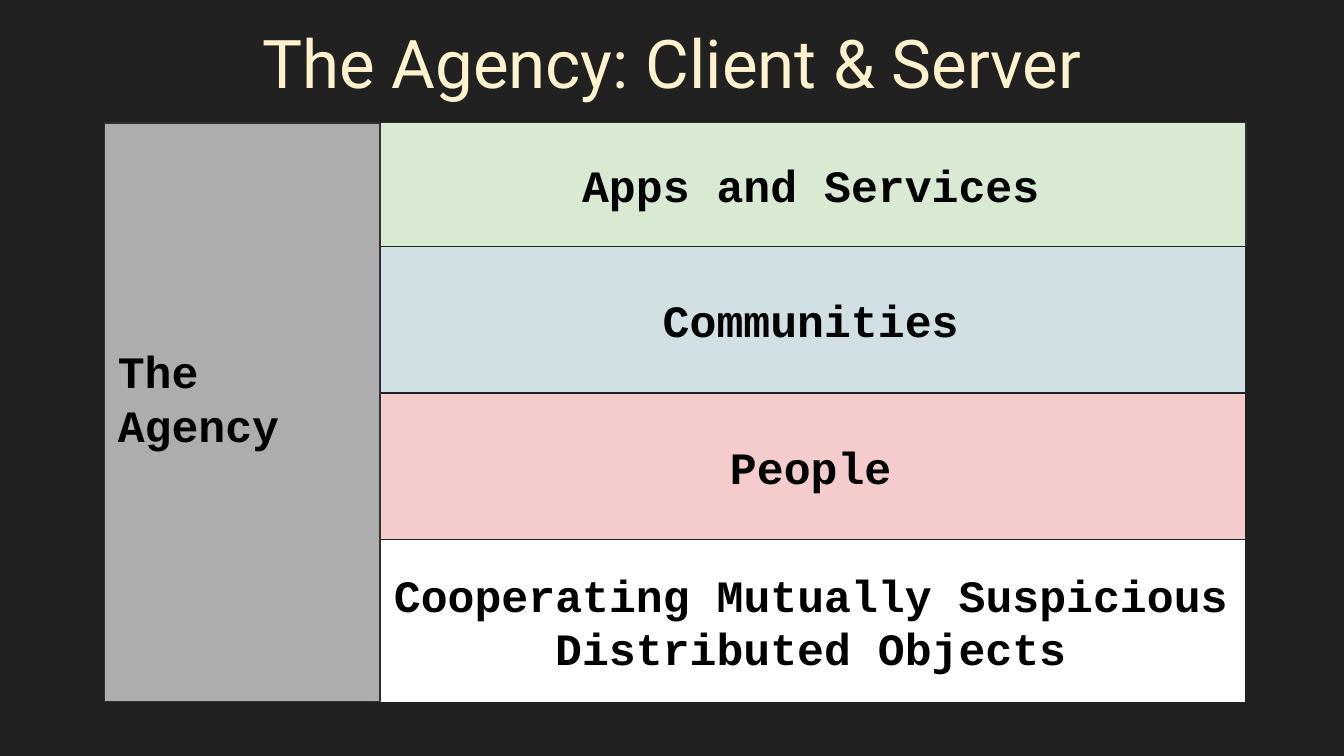
from dataclasses import dataclass

import pptx
import pptx.dml.color
import pptx.enum.shapes
import pptx.enum.text
import pptx.util

Pt = pptx.util.Pt
ALIGN = pptx.enum.text.PP_ALIGN


@dataclass(frozen=True)
class Theme:
    background: str = "212121"
    title: str = "FFF2CC"
    text: str = "000000"
    outline: str = "212121"
    soft_outline: str = "303030"
    agency: str = "ADADAD"
    apps: str = "D9EAD3"
    communities: str = "D0E0E3"
    people: str = "F4CCCC"
    objects: str = "FFFFFF"
    title_font: str = "Roboto"
    label_font: str = "Courier New"
    title_size: float = 36
    label_size: float = 24
    inset: float = 7.2


THEME = Theme()


def rgb(value):
    return pptx.dml.color.RGBColor.from_string(value)


def write_text(shape, text, font=THEME.label_font, size=THEME.label_size,
               color=THEME.text, bold=True, align=ALIGN.CENTER,
               bottom_inset=THEME.inset):
    frame = shape.text_frame
    frame.word_wrap = True
    frame.auto_size = pptx.enum.text.MSO_AUTO_SIZE.NONE
    frame.vertical_anchor = pptx.enum.text.MSO_ANCHOR.MIDDLE
    frame.margin_left = frame.margin_right = frame.margin_top = Pt(THEME.inset)
    frame.margin_bottom = Pt(bottom_inset)
    para = frame.paragraphs[0]
    para.alignment = align
    span = para.add_run()
    span.text = text
    span.font.name = font
    span.font.size = Pt(size)
    span.font.bold = bold
    span.font.color.rgb = rgb(color)


def set_outline(shape, color):
    shape.line.color.rgb = rgb(color)
    shape.line.width = Pt(0.75)


def add_panel(page, box, fill, outline, text, **text_format):
    panel = page.shapes.add_shape(
        pptx.enum.shapes.MSO_SHAPE.RECTANGLE, *(Pt(length) for length in box))
    panel.shadow.inherit = False
    panel.fill.solid()
    panel.fill.fore_color.rgb = rgb(fill)
    set_outline(panel, outline)
    write_text(panel, text, **text_format)


def place_title(page, box, text):
    title = page.shapes.title
    title.left, title.top, title.width, title.height = map(Pt, box)
    set_outline(title, THEME.outline)
    write_text(title, text, font=THEME.title_font, size=THEME.title_size,
               color=THEME.title, bold=False)


def place_layers(page, box):
    """Stack the layers from top to bottom, sharing the height by weight."""
    left, top, width, height = box
    layers = [
        ("Apps and Services", THEME.apps, THEME.soft_outline, 66.5),
        ("Communities", THEME.communities, THEME.outline, 78.5),
        ("People", THEME.people, THEME.outline, 78.5),
        ("Cooperating Mutually Suspicious Distributed Objects",
         THEME.objects, THEME.outline, 87.5),
    ]
    total = sum(weight for *_, weight in layers)
    for text, fill, outline, weight in layers:
        layer_height = height * weight / total
        add_panel(page, (left, top, width, layer_height), fill, outline, text)
        top += layer_height


def place_agency(page, box):
    # The deeper bottom inset lifts the label above the middle
    add_panel(page, box, THEME.agency, THEME.soft_outline, "The Agency",
              align=ALIGN.LEFT, bottom_inset=THEME.inset + 16)


def main():
    deck = pptx.Presentation()
    deck.slide_width, deck.slide_height = Pt(720), Pt(405)
    page = deck.slides.add_slide(deck.slide_layouts.get_by_name("Title Only"))
    page.background.fill.solid()
    page.background.fill.fore_color.rgb = rgb(THEME.background)

    place_title(page, (0, 0, 720, 66), "The Agency: Client & Server")
    # The agency column overlaps the left edge of the layers
    place_layers(page, (201, 65.5, 466.5, 311))
    place_agency(page, (56, 66, 147.5, 310))
    deck.save("out.pptx")


if __name__ == "__main__":
    main()
